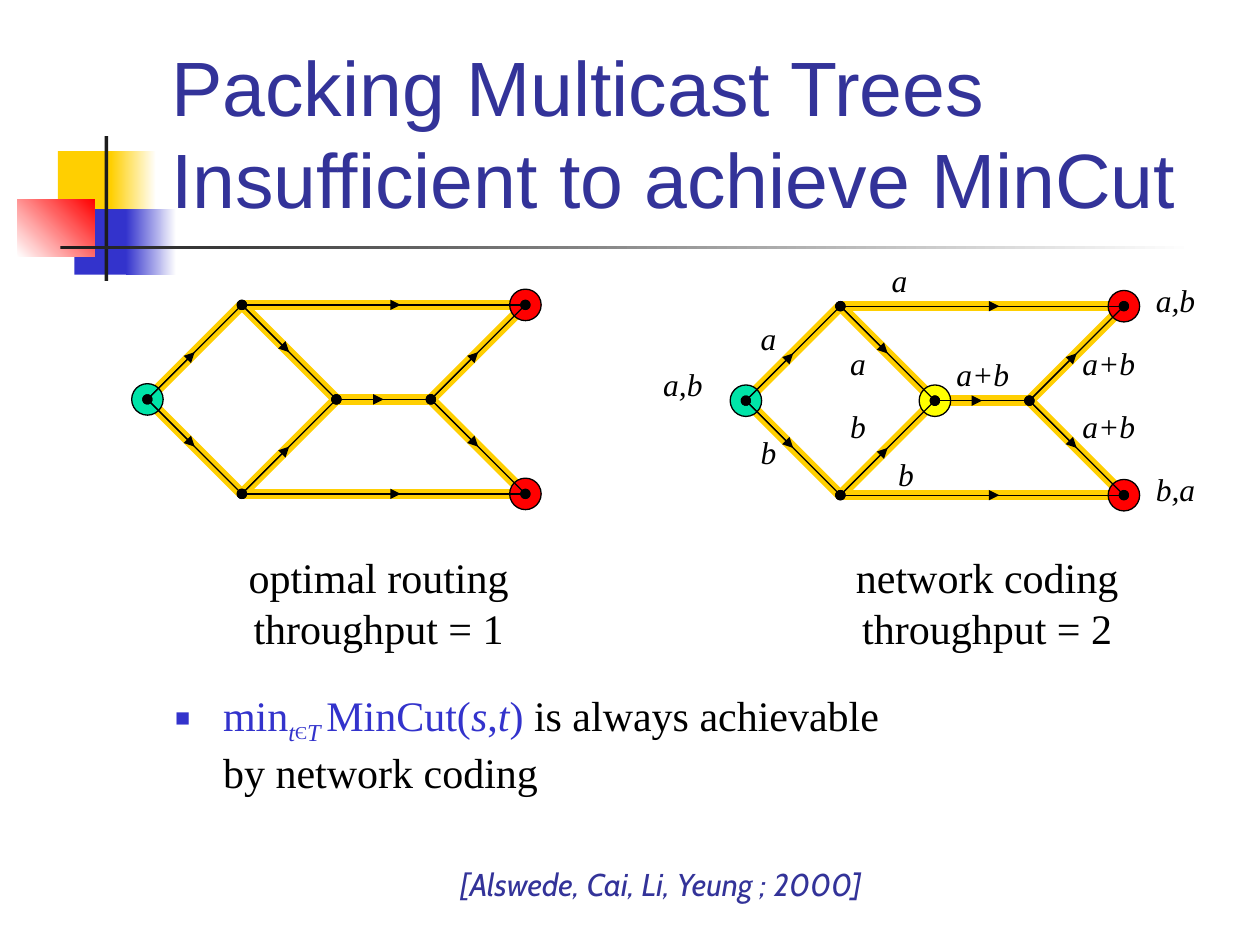
"""Builds a slide comparing optimal routing with network coding on the butterfly network."""
from dataclasses import dataclass
from typing import Optional

from lxml.etree import SubElement
from pptx import Presentation
from pptx.dml.color import RGBColor
from pptx.enum.shapes import MSO_CONNECTOR, MSO_SHAPE
from pptx.enum.text import MSO_ANCHOR, MSO_AUTO_SIZE, PP_ALIGN
from pptx.oxml.ns import qn
from pptx.util import Inches, Pt

COLORS = {
    "gold": "FFCF01", "blue": "3333CC", "navy": "333399", "red": "FF0000", "green": "00E4A8",
    "yellow": "FFFF00", "black": "000000", "ink": "1C1C1C", "white": "FFFFFF",
}
SERIF = "Times New Roman"
STEP = 0.75
NODE_SIZE = 0.25


@dataclass
class Block:
    left: float
    top: float
    width: float
    height: float
    color: str
    fade_to: Optional[str] = None
    angle: int = 0


@dataclass
class Edge:
    start: str
    end: str
    arrow: float = 0.5


@dataclass
class Network:
    left: float
    middle: float
    node_colors: dict[str, str]


@dataclass
class Label:
    text: str
    center: float
    top: float


@dataclass
class Span:
    text: str
    color: str = "blue"
    size: int = 24
    italic: bool = False
    baseline: int = 0


BLOCKS = [
    Block(0.46, 1.2, 0.48, 0.52, "gold"),
    Block(0.88, 1.2, 0.36, 0.52, "gold", "white"),
    Block(0.59, 1.66, 0.46, 0.52, "blue"),
    Block(1, 1.66, 0.4, 0.52, "blue", "white"),
    Block(0.14, 1.58, 0.61, 0.46, "white", "red", 45),
    Block(0.83, 1.08, 0.03, 1.15, "ink"),
    Block(0.48, 1.95, 9, 0.03, "ink", "white"),
]
NODES = {
    "source": (0, 0), "upper": (1, -1), "lower": (1, 1), "merge": (2, 0),
    "split": (3, 0), "upper sink": (4, -1), "lower sink": (4, 1),
}
EDGES = [
    Edge("source", "upper"), Edge("source", "lower"),
    Edge("upper", "merge"), Edge("lower", "merge"), Edge("merge", "split"),
    Edge("split", "upper sink"), Edge("split", "lower sink"),
    Edge("upper", "upper sink", 0.56), Edge("lower", "lower sink", 0.56),
]
END_COLORS = {"source": "green", "upper sink": "red", "lower sink": "red"}
NETWORKS = [
    Network(1.17, 3.17, END_COLORS),
    Network(5.92, 3.18, END_COLORS | {"merge": "yellow"}),
]
LABELS = [
    Label("a,b", 5.42, 2.85), Label("a", 6.1, 2.48), Label("a", 7.14, 2.02),
    Label("a", 6.81, 2.68), Label("b", 6.1, 3.39), Label("b", 7.19, 3.56),
    Label("b", 6.81, 3.18), Label("a+b", 7.8, 2.77), Label("a+b", 8.8, 2.68),
    Label("a+b", 8.8, 3.18), Label("a,b", 9.33, 2.18), Label("b,a", 9.33, 3.68),
]
CLAIM = [
    Span("min"), Span("t", italic=True, baseline=-25), Span("Є", size=18, baseline=-25),
    Span("T ", italic=True, baseline=-25), Span("MinCut("), Span("s", italic=True),
    Span(","), Span("t", italic=True), Span(")"),
    Span(" is always achievable\nby network coding", "black"),
]


def rgb(name: str) -> RGBColor:
    return RGBColor.from_string(COLORS[name])


def place(shape, left: float, top: float, width: float, height: float) -> None:
    shape.left, shape.top = Inches(left), Inches(top)
    shape.width, shape.height = Inches(width), Inches(height)


def add_span(para, span: Span, font: str = SERIF) -> None:
    for index, line in enumerate(span.text.split("\n")):
        if index:
            para.add_line_break()
        run = para.add_run()
        run.text = line
        run.font.name, run.font.size = font, Pt(span.size)
        run.font.italic = span.italic
        run.font.color.rgb = rgb(span.color)
        if span.baseline:
            run.font._element.set("baseline", str(span.baseline * 1000))


def add_text(page, left: float, top: float, width: float, height: float, span: Span, font: str = SERIF):
    box = page.shapes.add_textbox(*map(Inches, (left, top, width, height)))
    box.text_frame.word_wrap = True
    para = box.text_frame.paragraphs[0]
    para.alignment = PP_ALIGN.CENTER
    add_span(para, span, font)
    return para


def set_indent(para, margin: float, indent: float):
    properties = para._p.get_or_add_pPr()
    properties.set("marL", str(Inches(margin)))
    properties.set("indent", str(Inches(indent)))
    return properties


def add_block(page, block: Block) -> None:
    shape = page.shapes.add_shape(MSO_SHAPE.RECTANGLE, 0, 0, 0, 0)
    place(shape, block.left, block.top, block.width, block.height)
    shape.shadow.inherit = False
    shape.line.fill.background()
    if block.fade_to is None:
        shape.fill.solid()
        shape.fill.fore_color.rgb = rgb(block.color)
        return
    shape.fill.gradient()
    shape.fill.gradient_angle = block.angle
    for stop, position, color in zip(shape.fill.gradient_stops, (0, 1), (block.color, block.fade_to)):
        stop.position, stop.color.rgb = position, rgb(color)


def add_line(page, start: tuple, end: tuple, color: str, width: float, head: str = "none", tail: str = "none") -> None:
    line = page.shapes.add_connector(MSO_CONNECTOR.STRAIGHT, *map(Inches, (*start, *end)))
    line.line.color.rgb, line.line.width = rgb(color), Pt(width)
    outline = line.line._get_or_add_ln()
    SubElement(outline, qn("a:headEnd"), type=head)
    SubElement(outline, qn("a:tailEnd"), type=tail)
    SubElement(line._element.spPr, qn("a:effectLst"))


def add_node(page, center: tuple, color: str) -> None:
    left, top = (value - NODE_SIZE / 2 for value in center)
    node = page.shapes.add_shape(MSO_SHAPE.OVAL, *map(Inches, (left, top, NODE_SIZE, NODE_SIZE)))
    node.shadow.inherit = False
    node.fill.solid()
    node.fill.fore_color.rgb = rgb(color)
    node.line.color.rgb, node.line.width = rgb("black"), Pt(0.75)


def add_network(page, network: Network) -> None:
    points = {name: (network.left + x * STEP, network.middle + y * STEP) for name, (x, y) in NODES.items()}
    for edge in EDGES:
        add_line(page, points[edge.start], points[edge.end], "gold", 6)
    for name, color in network.node_colors.items():
        add_node(page, points[name], color)
    for edge in EDGES:
        start, end = points[edge.start], points[edge.end]
        arrow_tip = tuple(a + (b - a) * edge.arrow for a, b in zip(start, end))
        add_line(page, start, end, "black", 0.75, "oval", "oval")
        add_line(page, start, arrow_tip, "black", 0.75, tail="triangle")


def fill_title(title) -> None:
    place(title, 1.26, 0.23, 8.52, 1.6)
    frame = title.text_frame
    frame.auto_size, frame.vertical_anchor = MSO_AUTO_SIZE.NONE, MSO_ANCHOR.BOTTOM
    para = frame.paragraphs[0]
    para.alignment = PP_ALIGN.LEFT
    add_span(para, Span("Packing Multicast Trees Insufficient to achieve MinCut", "navy", 44), "Arial")


def fill_body(body) -> None:
    place(body, 1.29, 5.42, 8.5, 1.08)
    body.text_frame.auto_size = MSO_AUTO_SIZE.NONE
    para = body.text_frame.paragraphs[0]
    para.space_before = Pt(4.8)
    properties = set_indent(para, 0.38, -0.38)
    bullet_color = SubElement(properties, qn("a:buClr"))
    SubElement(bullet_color, qn("a:srgbClr"), val=COLORS["blue"])
    SubElement(properties, qn("a:buSzPct"), val="60000")
    SubElement(properties, qn("a:buChar"), char="■")
    for span in CLAIM:
        add_span(para, span)


def main() -> None:
    deck = Presentation()
    deck.slide_width, deck.slide_height = Inches(10), Inches(7.5)
    page = deck.slides.add_slide(deck.slide_layouts[1])
    title, body = page.placeholders
    for block in BLOCKS:
        add_block(page, block)
    fill_title(title)
    page.shapes._spTree.append(title._element)
    add_text(page, 1.17, 4.33, 3.67, 0.91, Span("optimal routing\nthroughput = 1", "black"))
    add_text(page, 6.67, 4.33, 2.33, 0.91, Span("network coding\nthroughput = 2", "black"))
    for network in NETWORKS:
        add_network(page, network)
    for label in LABELS:
        add_text(page, label.center - 0.4, label.top, 0.8, 0.4, Span(label.text, "black", 18, True))
    citation = Span("[Alswede, Cai, Li, Yeung ; 2000]", "navy", 18, True)
    para = add_text(page, 0.58, 6.85, 8.83, 0.37, citation, "Cabin")
    para.line_spacing = 0.9
    set_indent(para, 0.5, 0)
    fill_body(body)
    deck.save("out.pptx")


if __name__ == "__main__":
    main()
